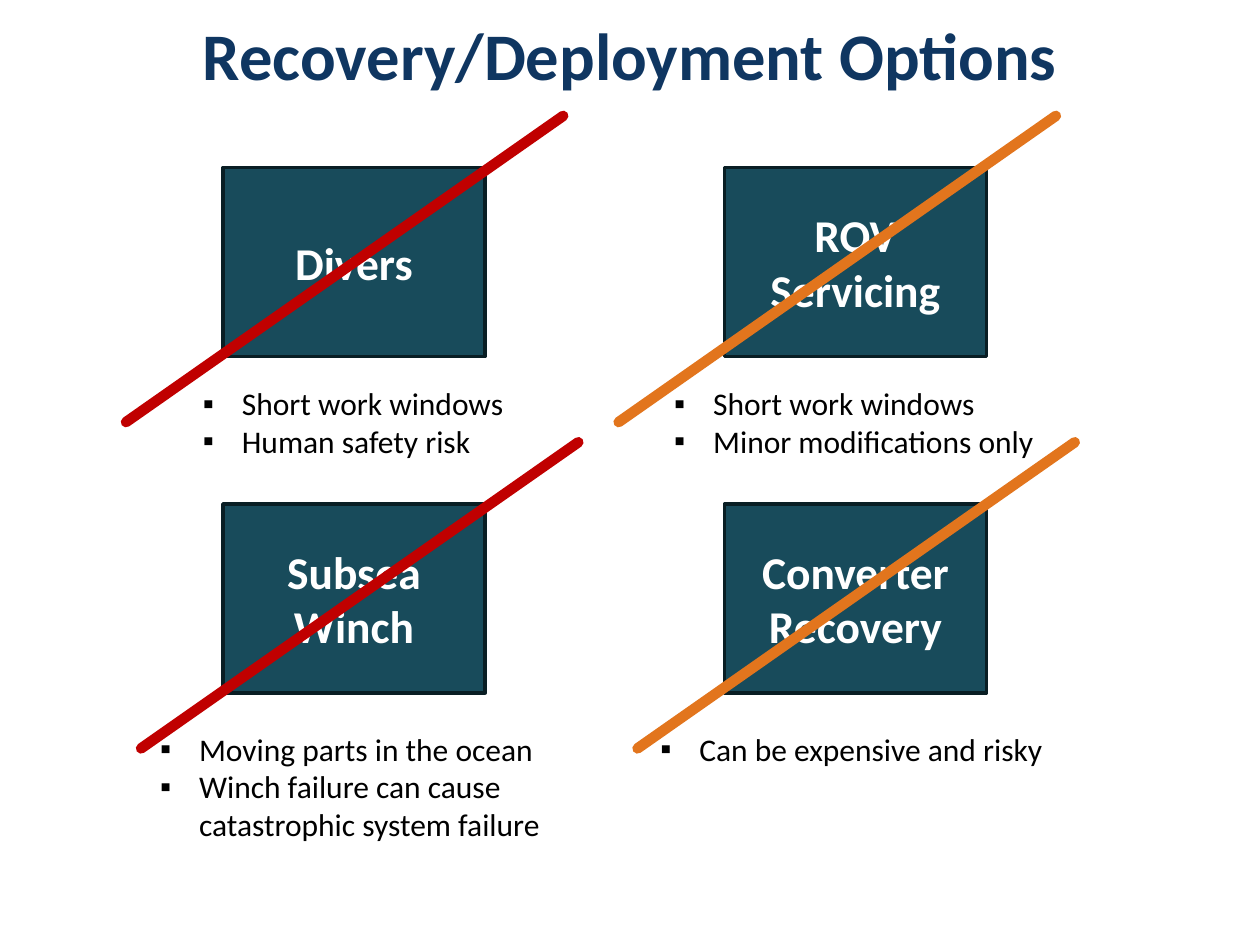
from lxml import etree
from pptx import Presentation
from pptx.dml.color import RGBColor
from pptx.enum import dml, shapes, text
from pptx.oxml.ns import qn
from pptx.util import Inches, Pt

COLORS = {
    "title": "0F3661", "box": "184B5B", "edge": "091E24", "label": "FFFFFF",
    "body": "000000", "rejected": "C00000", "doubtful": "E2751D",
}
TITLE = "Recovery/Deployment Options"
# Row by row; list and strike positions are inches, wrap tells if the list wraps
OPTIONS = [
    {"name": "Divers", "verdict": "rejected", "strike": (1, 3.35),
     "points": ["Short work windows", "Human safety risk"],
     "list": (1.51, 3, 2.61, 0.71), "wrap": False},
    {"name": "ROV Servicing", "verdict": "doubtful", "strike": (4.91, 3.35),
     "points": ["Short work windows", "Minor modifications only"],
     "list": (5.25, 3, 3.09, 0.71), "wrap": False},
    {"name": "Subsea Winch", "verdict": "rejected", "strike": (1.12, 5.94),
     "points": ["Moving parts in the ocean",
                "Winch failure can cause catastrophic system failure"],
     "list": (1.17, 5.74, 3.3, 1.01), "wrap": True},
    {"name": "Converter Recovery", "verdict": "doubtful", "strike": (5.06, 5.94),
     "points": ["Can be expensive and risky"],
     "list": (5.14, 5.74, 3.3, 0.4), "wrap": True},
]
COLUMNS, ROWS = (1.77, 5.75), (1.33, 4)
BOX_SIZE = (2.08, 1.5)
STRIKE_RUN, STRIKE_RISE = 3.47, 2.43
INDENT = 0.31


def color(name):
    return RGBColor.from_string(COLORS[name])


def place(shape, area):
    for side, value in zip(("left", "top", "width", "height"), area):
        setattr(shape, side, Inches(value))


def write(para, words, size, tint, bold, align):
    para.alignment = align
    para.space_before = Pt(0)
    span = para.add_run()
    span.text = words
    for key, value in {"name": "Calibri", "size": Pt(size), "bold": bold}.items():
        setattr(span.font, key, value)
    span.font.color.rgb = color(tint)


def add_bullet(para):
    props = para._p.get_or_add_pPr()
    props.set("marL", str(Inches(INDENT)))
    props.set("indent", str(-Inches(INDENT)))
    etree.SubElement(props, qn("a:buFont")).set("typeface", "Arial")
    etree.SubElement(props, qn("a:buChar")).set("char", "▪")


def set_frame(frame, **values):
    for key, value in values.items():
        setattr(frame, key, value)


def add_title(page):
    title = page.shapes.title
    place(title, (0, 0.11, 10, 0.64))
    set_frame(title.text_frame, margin_left=0, margin_right=0, margin_top=0,
              margin_bottom=0, auto_size=text.MSO_AUTO_SIZE.NONE,
              vertical_anchor=text.MSO_ANCHOR.TOP)
    write(title.text_frame.paragraphs[0], TITLE, 38, "title", True,
          text.PP_ALIGN.CENTER)


def add_box(page, name, left, top):
    box = page.shapes.add_shape(shapes.MSO_SHAPE.RECTANGLE, 0, 0, 0, 0)
    place(box, (left, top, *BOX_SIZE))
    box.shadow.inherit = False
    box.fill.solid()
    box.fill.fore_color.rgb = color("box")
    box.line.color.rgb = color("edge")
    box.line.width = Pt(2)
    set_frame(box.text_frame, word_wrap=True,
              vertical_anchor=text.MSO_ANCHOR.MIDDLE)
    write(box.text_frame.paragraphs[0], name, 26, "label", True,
          text.PP_ALIGN.CENTER)


def fill_list(body, option):
    place(body, option["list"])
    frame = body.text_frame
    set_frame(frame, word_wrap=option["wrap"], auto_size=text.MSO_AUTO_SIZE.NONE,
              vertical_anchor=text.MSO_ANCHOR.TOP)
    for index, point in enumerate(option["points"]):
        para = frame.add_paragraph() if index else frame.paragraphs[0]
        write(para, point, 18, "body", False, text.PP_ALIGN.LEFT)
        add_bullet(para)


def add_strike(page, left, bottom, verdict):
    """Cross a box out with a round-ended diagonal."""
    strike = page.shapes.add_connector(
        shapes.MSO_CONNECTOR.STRAIGHT, Inches(left), Inches(bottom),
        Inches(left + STRIKE_RUN), Inches(bottom - STRIKE_RISE))
    strike.line.color.rgb = color(verdict)
    strike.line.width = Pt(6)
    strike.line.dash_style = dml.MSO_LINE.SOLID
    strike.line._get_or_add_ln().set("cap", "rnd")
    etree.SubElement(strike._element.spPr, qn("a:effectLst"))


def main():
    deck = Presentation()
    deck.slide_width, deck.slide_height = Inches(10), Inches(7.5)
    page = deck.slides.add_slide(deck.slide_layouts.get_by_name("Comparison"))
    add_title(page)
    bodies = list(page.placeholders)[1:]
    for index, (option, body) in enumerate(zip(OPTIONS, bodies)):
        row, column = divmod(index, len(COLUMNS))
        add_box(page, option["name"], COLUMNS[column], ROWS[row])
        fill_list(body, option)
    for option in OPTIONS:
        add_strike(page, *option["strike"], option["verdict"])
    deck.save("out.pptx")


if __name__ == "__main__":
    main()
